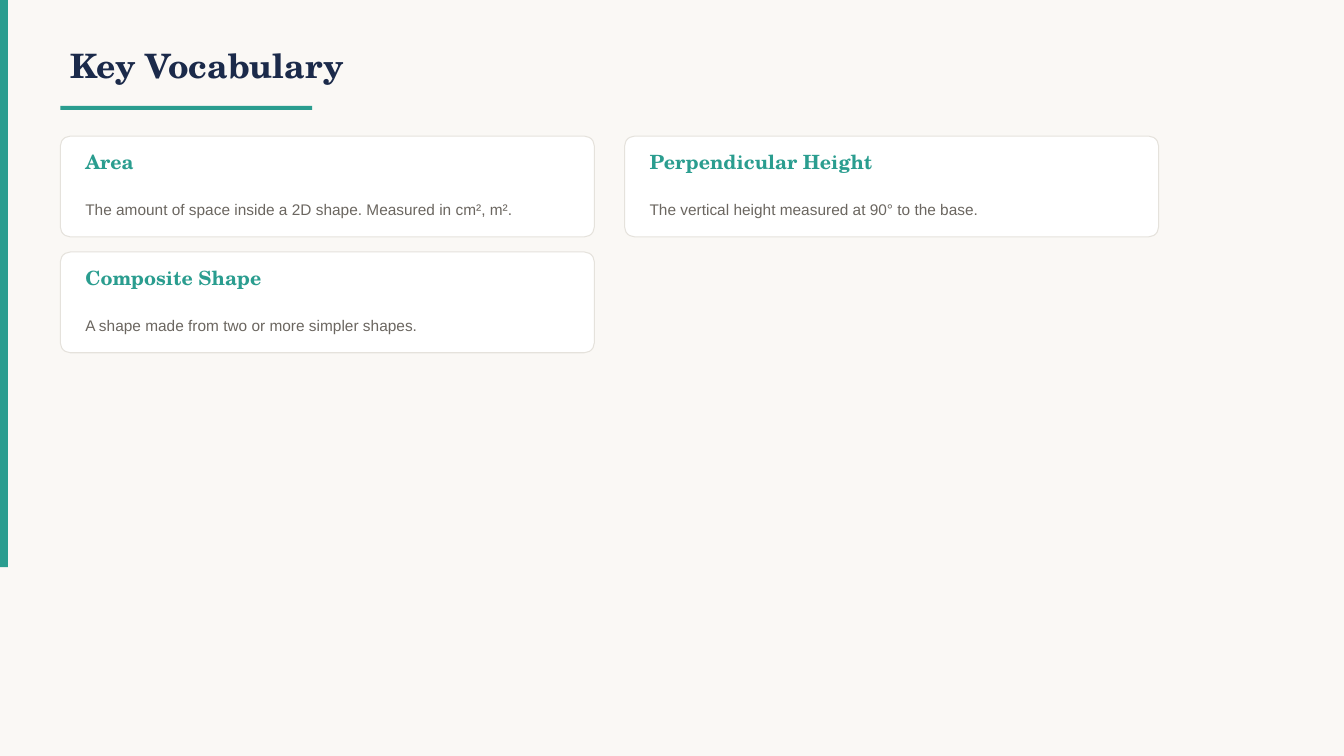
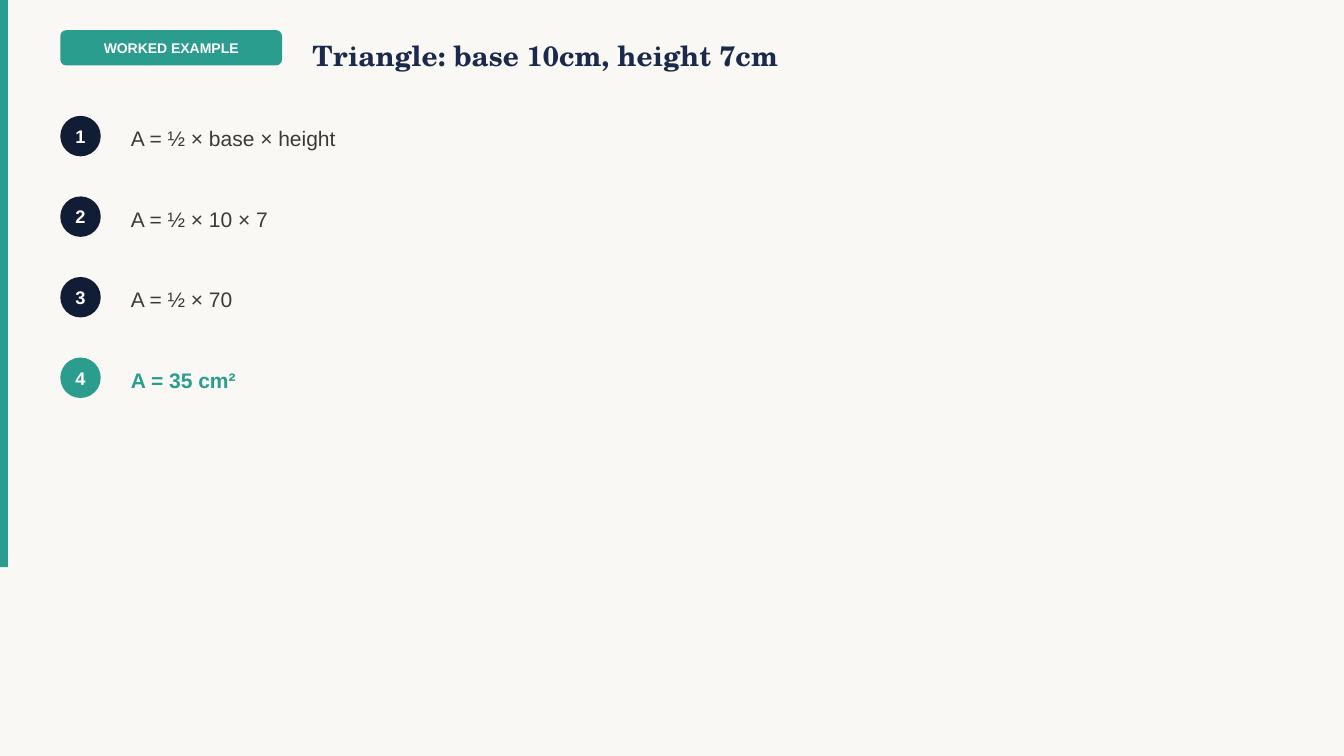
from pptx import Presentation
from pptx.dml.color import RGBColor
from pptx.enum.shapes import MSO_SHAPE
from pptx.enum.text import MSO_ANCHOR, PP_ALIGN
from pptx.util import Cm, Pt

VOCABULARY_TITLE = "Key Vocabulary"
VOCABULARY = [
    ("Area", "The amount of space inside a 2D shape. Measured in cm², m²."),
    ("Perpendicular Height", "The vertical height measured at 90° to the base."),
    ("Composite Shape", "A shape made from two or more simpler shapes."),
]
EXAMPLE_BADGE = "WORKED EXAMPLE"
EXAMPLE_TITLE = "Triangle: base 10cm, height 7cm"
STEPS = ["A = ½ × base × height", "A = ½ × 10 × 7", "A = ½ × 70", "A = 35 cm²"]

HEADING_FONT, BODY_FONT = "TeX Gyre Schola", "Arial"
CREAM, WHITE, TEAL, NAVY, MIDNIGHT = "FAF8F5", "FFFFFF", "2A9D8F", "1B2A4A", "111D35"
BORDER, GREY, CHARCOAL = "E5E2DC", "6B6660", "3D3A36"

# Lengths in centimetres
MARGIN, TOP = 1.52, 0.76
COLUMNS, CARD_TOP = 2, 3.43
CARD_WIDTH, CARD_HEIGHT = 13.46, 2.54
COLUMN_GAP, ROW_GAP = 0.76, 0.38
CARD_PADDING, CARD_TEXT_WIDTH = 0.38, 12.7
STEP_TOP, STEP_PITCH, CIRCLE = 2.92, 2.03, 1.02
STEP_TEXT_LEFT, STEP_TEXT_HEIGHT = 3.05, 1.4


def color(value):
    return RGBColor.from_string(value)


def write(shape, words, size, text_color, font=BODY_FONT, bold=False,
          align=PP_ALIGN.LEFT, line_spacing=None):
    frame = shape.text_frame
    frame.word_wrap = True
    frame.vertical_anchor = MSO_ANCHOR.MIDDLE
    paragraph = frame.paragraphs[0]
    paragraph.alignment = align
    if line_spacing:
        paragraph.line_spacing = line_spacing
    run = paragraph.add_run()
    run.text = words
    run.font.name, run.font.size, run.font.bold = font, Pt(size), bold
    run.font.color.rgb = color(text_color)


def add_text(slide, box, words, size, text_color, **style):
    write(slide.shapes.add_textbox(*map(Cm, box)), words, size, text_color, **style)


def add_heading(slide, box, words, size, text_color=NAVY):
    add_text(slide, box, words, size, text_color, font=HEADING_FONT, bold=True)


def add_panel(slide, kind, box, fill, border=None, corner=None):
    shape = slide.shapes.add_shape(kind, *map(Cm, box))
    shape.shadow.inherit = False
    shape.fill.solid()
    shape.fill.fore_color.rgb = color(fill)
    if border:
        shape.line.color.rgb = color(border)
        shape.line.width = Pt(0.75)
    else:
        shape.line.fill.background()
    if corner is not None:
        shape.adjustments[0] = corner
    return shape


def add_label(shape, words, size):
    """Write centred white text inside a filled shape, without insets."""
    frame = shape.text_frame
    frame.margin_left = frame.margin_right = frame.margin_top = frame.margin_bottom = 0
    write(shape, words, size, WHITE, bold=True, align=PP_ALIGN.CENTER)


def add_slide(presentation):
    """Add a blank slide with the shared background and side band."""
    slide = presentation.slides.add_slide(presentation.slide_layouts[6])
    slide.background.fill.solid()
    slide.background.fill.fore_color.rgb = color(CREAM)
    add_panel(slide, MSO_SHAPE.RECTANGLE, (0, 0, 0.2, 14.29), TEAL)
    return slide


def build_vocabulary(presentation):
    slide = add_slide(presentation)
    add_heading(slide, (MARGIN, TOP, 25.4, 1.78), VOCABULARY_TITLE, 24)
    add_panel(slide, MSO_SHAPE.RECTANGLE, (MARGIN, 2.67, 6.35, 0.1), TEAL)
    for index, (term, meaning) in enumerate(VOCABULARY):
        row, column = divmod(index, COLUMNS)
        left = MARGIN + column * (CARD_WIDTH + COLUMN_GAP)
        top = CARD_TOP + row * (CARD_HEIGHT + ROW_GAP)
        text_left = left + CARD_PADDING
        add_panel(slide, MSO_SHAPE.ROUNDED_RECTANGLE,
                  (left, top, CARD_WIDTH, CARD_HEIGHT), WHITE, BORDER, 0.1)
        add_heading(slide, (text_left, top + 0.2, CARD_TEXT_WIDTH, 0.89), term, 14, TEAL)
        add_text(slide, (text_left, top + 1.14, CARD_TEXT_WIDTH, 1.27),
                 meaning, 11, GREY, line_spacing=1.3)


def build_example(presentation):
    slide = add_slide(presentation)
    badge = add_panel(slide, MSO_SHAPE.ROUNDED_RECTANGLE,
                      (MARGIN, TOP, 5.59, 0.89), TEAL, corner=0.17)
    add_label(badge, EXAMPLE_BADGE, 10)
    add_heading(slide, (7.62, TOP, 20.32, 1.27), EXAMPLE_TITLE, 20)
    for index, step in enumerate(STEPS):
        top = STEP_TOP + index * STEP_PITCH
        is_answer = index == len(STEPS) - 1
        circle = add_panel(slide, MSO_SHAPE.OVAL, (MARGIN, top, CIRCLE, CIRCLE),
                           TEAL if is_answer else MIDNIGHT)
        add_label(circle, str(index + 1), 13)
        add_text(slide, (STEP_TEXT_LEFT, top - 0.13, 26.67, STEP_TEXT_HEIGHT), step, 15,
                 TEAL if is_answer else CHARCOAL, bold=is_answer)


def main():
    presentation = Presentation()
    presentation.slide_width, presentation.slide_height = Cm(33.87), Cm(19.05)
    build_vocabulary(presentation)
    build_example(presentation)
    presentation.save("out.pptx")


if __name__ == "__main__":
    main()
